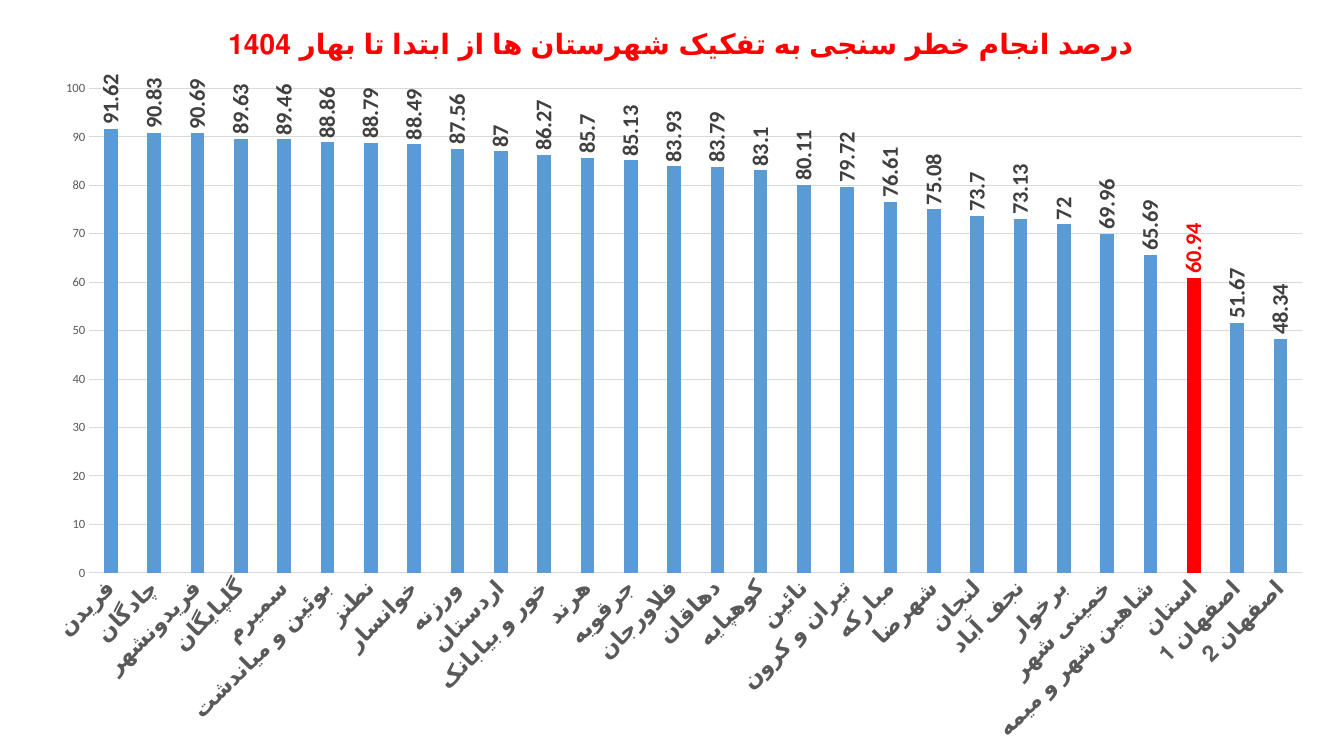
from lxml.etree import SubElement
from pptx import Presentation
from pptx.chart.data import CategoryChartData
from pptx.dml.color import RGBColor
from pptx.enum.chart import XL_CHART_TYPE, XL_LABEL_POSITION, XL_TICK_MARK
from pptx.oxml import parse_xml
from pptx.oxml.ns import nsdecls, qn
from pptx.util import Inches, Pt

BLUE = RGBColor(0x5B, 0x9B, 0xD5)
RED = RGBColor(0xFF, 0x00, 0x00)
BLACK = RGBColor(0x00, 0x00, 0x00)
DARK = RGBColor(0x40, 0x40, 0x40)
GREY = RGBColor(0x59, 0x59, 0x59)
PALE = RGBColor(0xD9, 0xD9, 0xD9)

HEADING = "درصد انجام خطر سنجی به تفکیک شهرستان ها از ابتدا تا بهار 1404"
PROVINCE = "استان"
COMPLETION = {
    "فریدن": 91.62,
    "چادگان": 90.83,
    "فریدونشهر": 90.69,
    "گلپایگان": 89.63,
    "سمیرم": 89.46,
    "بوئین و میاندشت": 88.86,
    "نطنز": 88.79,
    "خوانسار": 88.49,
    "ورزنه": 87.56,
    "اردستان": 87,
    "خور و بیابانک": 86.27,
    "هرند": 85.7,
    "جرقویه": 85.13,
    "فلاورجان": 83.93,
    "دهاقان": 83.79,
    "کوهپایه": 83.1,
    "نائین": 80.11,
    "تیران و کرون": 79.72,
    "مبارکه": 76.61,
    "شهرضا": 75.08,
    "لنجان": 73.7,
    "نجف آباد": 73.13,
    "برخوار": 72,
    "خمینی شهر": 69.96,
    "شاهین شهر و میمه": 65.69,
    PROVINCE: 60.94,
    "اصفهان 1": 51.67,
    "اصفهان 2": 48.34,
}

FORMATS = {
    "chart": {"size": Pt(10), "name": "Calibri", "color": BLACK},
    "heading": {"size": Pt(20), "bold": True, "color": RED},
    "counties": {"size": Pt(16), "bold": True, "name": "Calibri", "color": GREY},
    "scale": {"size": Pt(9), "bold": False, "name": "Calibri", "color": GREY},
    "values": {"size": Pt(16), "bold": True, "name": "Calibri", "color": DARK},
    "province": {"size": Pt(16), "bold": True, "name": "Calibri", "color": RED},
}
HEADING_PLACE = {"x": 0.15, "y": 0.03}
PLOT_PLACE = {"x": 0.047, "y": 0.117, "w": 0.934, "h": 0.641}


def style(font, part):
    for attribute, value in FORMATS[part].items():
        if attribute == "color":
            font.color.rgb = value
        else:
            setattr(font, attribute, value)


def place(element, index, fractions, inner=False):
    for old in element.findall(qn("c:layout")):
        element.remove(old)
    layout = parse_xml(f"<c:layout {nsdecls('c')}/>")
    manual = SubElement(layout, qn("c:manualLayout"))
    if inner:
        SubElement(manual, qn("c:layoutTarget")).set("val", "inner")
    for side in "xy":
        SubElement(manual, qn(f"c:{side}Mode")).set("val", "edge")
    for side, fraction in fractions.items():
        SubElement(manual, qn(f"c:{side}")).set("val", str(fraction))
    element.insert(index, layout)


def rotate(chart, owner, degrees):
    for body in chart.element.xpath(f".//c:{owner}/c:txPr/a:bodyPr"):
        body.set("rot", str(degrees * 60000))
        body.set("vert", "horz")


def main():
    deck = Presentation()
    deck.slide_width, deck.slide_height = Inches(13.33), Inches(7.5)
    slide = deck.slides.add_slide(deck.slide_layouts[6])

    data = CategoryChartData()
    data.categories = list(COMPLETION)
    data.add_series("Series 1", list(COMPLETION.values()))
    chart = slide.shapes.add_chart(
        XL_CHART_TYPE.COLUMN_CLUSTERED,
        Inches(0.28), Inches(0), Inches(12.88), Inches(7.5), data,
    ).chart
    style(chart.font, "chart")
    chart.has_legend = False

    heading = chart.chart_title.text_frame.paragraphs[0]
    heading_run = heading.add_run()
    heading_run.text = HEADING
    style(heading_run.font, "heading")
    for properties in chart.element.xpath(".//c:title//a:p"):
        properties.get_or_add_pPr().set("rtl", "1")
    place(chart.element.xpath(".//c:title")[0], 1, HEADING_PLACE)
    place(chart.element.xpath(".//c:plotArea")[0], 0, PLOT_PLACE, inner=True)

    counties, scale = chart.category_axis, chart.value_axis
    for axis, part in ((counties, "counties"), (scale, "scale")):
        axis.major_tick_mark = axis.minor_tick_mark = XL_TICK_MARK.NONE
        style(axis.tick_labels.font, part)
    scale.minimum_scale, scale.maximum_scale, scale.major_unit = 0, 100, 10
    scale.has_major_gridlines = True
    scale.format.line.fill.background()
    for line in (counties.format.line, scale.major_gridlines.format.line):
        line.color.rgb = PALE
        line.width = Pt(0.75)

    plot = chart.plots[0]
    plot.gap_width, plot.overlap, plot.vary_by_categories = 219, -27, False
    bars = plot.series[0]
    bars.format.fill.solid()
    bars.format.fill.fore_color.rgb = BLUE
    bars.invert_if_negative = False
    values = bars.data_labels
    values.show_value = True
    values.position = XL_LABEL_POSITION.OUTSIDE_END
    style(values.font, "values")

    province = bars.points[list(COMPLETION).index(PROVINCE)]
    province.format.fill.solid()
    province.format.fill.fore_color.rgb = RED
    style(province.data_label.font, "province")
    province.data_label.position = XL_LABEL_POSITION.OUTSIDE_END

    for owner, degrees in (("catAx", -45), ("dLbls", -90), ("dLbl", -90)):
        rotate(chart, owner, degrees)
    deck.save("out.pptx")


if __name__ == "__main__":
    main()
